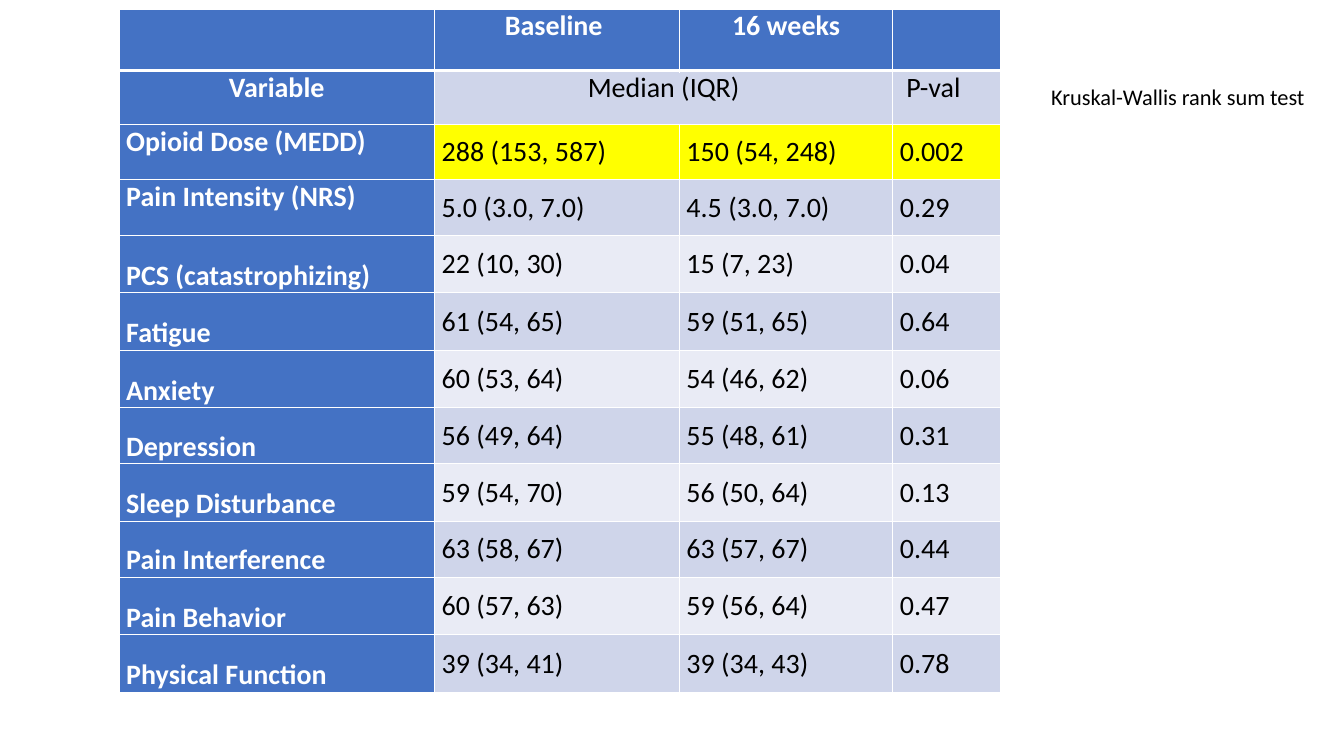
import pptx
import pptx.util
import pptx.dml.color
import pptx.enum.text
import pptx.oxml
import pptx.oxml.ns

Cm = pptx.util.Cm
Pt = pptx.util.Pt
ALIGN = pptx.enum.text.PP_ALIGN
ANCHOR = pptx.enum.text.MSO_ANCHOR

COLORS = {
    "header": "4472C4",
    "dark_band": "CFD5EA",
    "light_band": "E9EBF5",
    "highlight": "FFFF00",
    "white": "FFFFFF",
    "black": "000000",
}
COLUMN_WIDTHS = [7.95, 6.17, 5.38, 2.72]
ROW_HEIGHTS = [1.55, 1.36, 1.39, 1.4, 1.45, 1.45, 1.45, 1.41, 1.45, 1.41, 1.45, 1.45]
OUTCOMES = [
    ["", "Baseline ", "16 weeks", ""],
    ["Variable", "Median (IQR)", "", " P-val"],
    ["Opioid Dose (MEDD)", "288 (153, 587)", "150 (54, 248)", "0.002"],
    ["Pain Intensity (NRS)", "5.0 (3.0, 7.0)", "4.5 (3.0, 7.0)", "0.29"],
    ["PCS (catastrophizing)", "22 (10, 30)", "15 (7, 23)", "0.04"],
    ["Fatigue", "61 (54, 65)", "59 (51, 65)", "0.64"],
    ["Anxiety", "60 (53, 64)", "54 (46, 62)", "0.06"],
    ["Depression", "56 (49, 64)", "55 (48, 61)", "0.31"],
    ["Sleep Disturbance", "59 (54, 70)", "56 (50, 64)", "0.13"],
    ["Pain Interference", "63 (58, 67)", "63 (57, 67)", "0.44"],
    ["Pain Behavior", "60 (57, 63)", "59 (56, 64)", "0.47"],
    ["Physical Function", "39 (34, 41)", "39 (34, 43)", "0.78"],
]
MEDD_ROW = 2
FIRST_BOTTOM_ROW = 4


def apply_format(target, values):
    for attribute, value in values.items():
        setattr(target, attribute, value)


def write_text(frame, text, size, color, bold=False, align=ALIGN.LEFT):
    paragraph = frame.paragraphs[0]
    paragraph.alignment = align
    paragraph.font.size = Pt(size)
    if text:
        run = paragraph.add_run()
        run.text = text
        apply_format(run.font, {"name": "Calibri", "size": Pt(size), "bold": bold})
        run.font.color.rgb = pptx.dml.color.RGBColor.from_string(COLORS[color])


def add_borders(cell, row):
    widths = {"L": 1, "R": 1, "T": 3 if row == 1 else 1, "B": 3 if row == 0 else 1}
    properties = cell._tc.get_or_add_tcPr()
    for side, width in widths.items():
        properties.append(pptx.oxml.parse_xml(
            f'<a:ln{side} {pptx.oxml.ns.nsdecls("a")} w="{Pt(width)}">'
            f'<a:solidFill><a:srgbClr val="{COLORS["white"]}"/></a:solidFill></a:ln{side}>'
        ))


def fill_name(row, column):
    if row == 0 or column == 0:
        return "header"
    if row == MEDD_ROW:
        return "highlight"
    return "dark_band" if row % 2 else "light_band"


def cell_anchor(row, column):
    if row < MEDD_ROW:
        return ANCHOR.TOP
    if column:
        return ANCHOR.MIDDLE
    return ANCHOR.BOTTOM if row >= FIRST_BOTTOM_ROW else ANCHOR.TOP


def format_cell(cell, row, column, text):
    fill = fill_name(row, column)
    centred = row < MEDD_ROW and not (row == 1 and column == 3)
    add_borders(cell, row)
    cell.fill.solid()
    cell.fill.fore_color.rgb = pptx.dml.color.RGBColor.from_string(COLORS[fill])
    apply_format(cell, {
        "margin_left": Cm(0.18),
        "margin_right": Cm(0.18),
        "margin_top": 0,
        "margin_bottom": 0,
        "vertical_anchor": cell_anchor(row, column),
    })
    heading = fill == "header"
    write_text(cell.text_frame, text, 20, "white" if heading else "black",
               heading, ALIGN.CENTER if centred else ALIGN.LEFT)


def add_outcome_table(slide):
    outcome_table = slide.shapes.add_table(
        len(OUTCOMES), len(COLUMN_WIDTHS), Cm(3), Cm(0.23),
        Cm(sum(COLUMN_WIDTHS)), Cm(sum(ROW_HEIGHTS))).table
    for column, width in zip(outcome_table.columns, COLUMN_WIDTHS):
        column.width = Cm(width)
    for row, height in zip(outcome_table.rows, ROW_HEIGHTS):
        row.height = Cm(height)
    for row, texts in enumerate(OUTCOMES):
        for column, text in enumerate(texts):
            format_cell(outcome_table.cell(row, column), row, column, text)
    outcome_table.cell(1, 1).merge(outcome_table.cell(1, 2))


def add_test_note(slide, text):
    test_note = slide.shapes.add_textbox(Cm(26.24), Cm(1.96), Cm(7.98), Cm(0.94)).text_frame
    apply_format(test_note, {
        "word_wrap": True,
        "auto_size": pptx.enum.text.MSO_AUTO_SIZE.SHAPE_TO_FIT_TEXT,
    })
    write_text(test_note, text, 16, "black")


def main():
    deck = pptx.Presentation()
    apply_format(deck, {"slide_width": Cm(33.87), "slide_height": Cm(19.05)})
    slide = deck.slides.add_slide(deck.slide_layouts[6])
    add_outcome_table(slide)
    add_test_note(slide, "Kruskal-Wallis rank sum test")
    deck.save("out.pptx")


if __name__ == "__main__":
    main()
